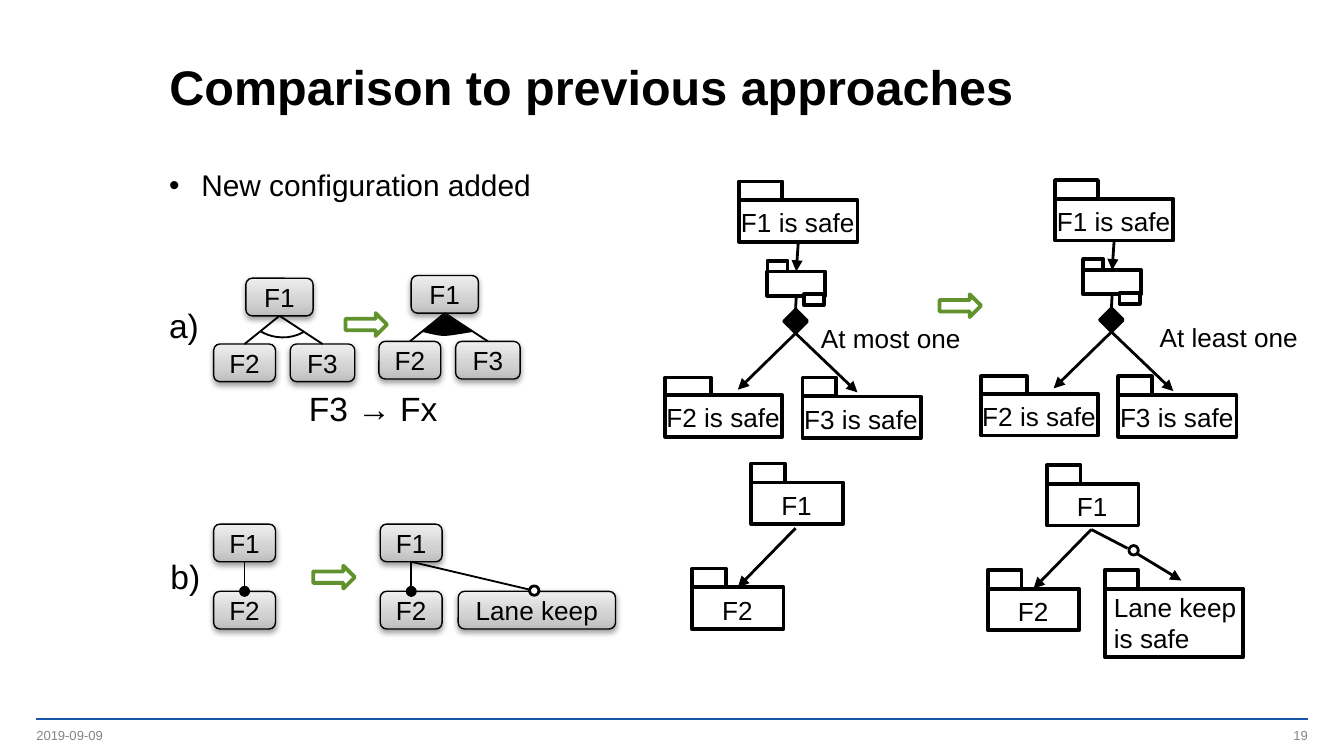
from lxml import etree
from pptx import Presentation
from pptx.dml.color import RGBColor
from pptx.enum.shapes import MSO_CONNECTOR, MSO_SHAPE
from pptx.enum.text import MSO_ANCHOR, MSO_AUTO_SIZE, PP_ALIGN
from pptx.oxml import parse_xml
from pptx.oxml.ns import nsdecls, qn
from pptx.util import Inches, Pt

BLACK = RGBColor(0, 0, 0)
WHITE = RGBColor(255, 255, 255)
GREEN = RGBColor(0x61, 0x92, 0x2E)
BLUE = RGBColor(0x19, 0x54, 0xA6)
GRAY = RGBColor(0x84, 0x84, 0x89)

RECT = MSO_SHAPE.RECTANGLE
ROUND = MSO_SHAPE.ROUNDED_RECTANGLE
PROC = MSO_SHAPE.FLOWCHART_PROCESS
ARROW = MSO_SHAPE.RIGHT_ARROW
OVAL = MSO_SHAPE.OVAL
ARC = MSO_SHAPE.ARC
LEFT, CENTER, RIGHT = PP_ALIGN.LEFT, PP_ALIGN.CENTER, PP_ALIGN.RIGHT
MIDDLE = MSO_ANCHOR.MIDDLE

LABEL = {"word_wrap": False, "auto_size": MSO_AUTO_SIZE.SHAPE_TO_FIT_TEXT}
FOOT = {"word_wrap": True, "vertical_anchor": MIDDLE, "margin_left": 0,
        "margin_right": 0, "margin_top": 0, "margin_bottom": 0}

GRAD = (f'<a:gradFill {nsdecls("a")} rotWithShape="1"><a:gsLst>'
        '<a:gs pos="0"><a:srgbClr val="BDBDBD"/></a:gs>'
        '<a:gs pos="35000"><a:srgbClr val="D1D1D1"/></a:gs>'
        '<a:gs pos="100000"><a:srgbClr val="EEEEEE"/></a:gs>'
        '</a:gsLst><a:lin ang="16200000" scaled="1"/></a:gradFill>')
SHADOW = (f'<a:effectLst {nsdecls("a")}>'
          '<a:outerShdw blurRad="40000" dist="20000" dir="5400000" rotWithShape="0">'
          '<a:srgbClr val="000000"><a:alpha val="38000"/></a:srgbClr>'
          '</a:outerShdw></a:effectLst>')


def apply(item, form):
    for key, value in form.items():
        setattr(item, key, value)


def write(frame, text, size, form, color=BLACK, align=LEFT, bold=False):
    apply(frame, form)
    frame.text = text
    for para in frame.paragraphs:
        para.alignment = align
        for run in para.runs:
            apply(run.font, {"name": "Arial", "size": Pt(size), "bold": bold})
            run.font.color.rgb = color


def label(shapes, box, text, size=14, form=LABEL, color=BLACK, align=LEFT):
    item = shapes.add_textbox(*map(Inches, box))
    write(item.text_frame, text, size, form, color, align)
    return item


def block(shapes, kind, box, width=2, fill=WHITE, edge=BLACK):
    item = shapes.add_shape(kind, *map(Inches, box))
    item.shadow.inherit = False
    if fill is None:
        item.fill.background()
    else:
        item.fill.solid()
        item.fill.fore_color.rgb = fill
    item.line.color.rgb = edge
    item.line.width = Pt(width)
    return item


def feature(shapes, text, x, y, w=0.46):
    item = block(shapes, ROUND, (x, y, w, 0.28), 0.75)
    props = item._element.spPr
    props.replace(props.find(qn("a:solidFill")), parse_xml(GRAD))
    props.replace(props.find(qn("a:effectLst")), parse_xml(SHADOW))
    write(item.text_frame, text, 14, {"vertical_anchor": MIDDLE}, align=CENTER)
    return item


def package(shapes, x, y, w, tab=0.25, h=0.31, rise=0.14):
    """Draw a folder-like box and return its body."""
    body = block(shapes, PROC, (x, y, w, h))
    block(shapes, RECT, (x, y - rise, tab, rise))
    return body


def named(shapes, text, x, y, w, tab=0.25, rise=0.14):
    """Draw a package with a label centred over its body."""
    body = package(shapes, x, y, w, tab, rise=rise)
    wide = 1.05 if "safe" in text else 0.43
    label(shapes, (x + w / 2 - wide / 2, y, wide, 0.34), text)
    return body


def line(shapes, start, end, width=1.5, tail=None, color=BLACK):
    """Join two points; a shape stands for its bottom (start) or top (end)."""
    free = [p if isinstance(p, tuple) else (0, 0) for p in (start, end)]
    item = shapes.add_connector(MSO_CONNECTOR.STRAIGHT,
                                *(Inches(n) for p in free for n in p))
    if not isinstance(start, tuple):
        item.begin_connect(start, 2)
    if not isinstance(end, tuple):
        item.end_connect(end, 0)
    item.line.color.rgb = color
    item.line.width = Pt(width)
    if tail:
        etree.SubElement(item.line._get_or_add_ln(), qn("a:tailEnd"), type=tail)
    etree.SubElement(item._element.spPr, qn("a:effectLst"))


def wedge(shapes):
    """Fill the or-group sector, its lower edge following a cubic curve."""
    curve = ((3.52, 2.47), (3.27, 2.51), (3.32, 2.51), (3.14, 2.47))
    points = [(3.31, 2.34)]
    for step in range(11):
        t = step / 10
        parts = ((1 - t) ** 3, 3 * t * (1 - t) ** 2, 3 * t * t * (1 - t), t ** 3)
        points.append(tuple(sum(k * p[i] for k, p in zip(parts, curve)) for i in (0, 1)))
    points = [(Inches(x), Inches(y)) for x, y in points]
    path = shapes.build_freeform(*points[0], scale=1.0)
    path.add_line_segments(points[1:], close=True)
    item = path.convert_to_shape()
    item.shadow.inherit = False
    item.fill.solid()
    item.fill.fore_color.rgb = BLACK
    item.line.fill.background()


def split(shapes, x, y):
    """Draw feature F1 over F2 and F3."""
    top = feature(shapes, "F1", x + 0.24, y, 0.5)
    for text, dx, w in (("F2", 0, 0.46), ("F3", 0.57, 0.48)):
        line(shapes, top, feature(shapes, text, x + dx, y + 0.49, w), 1)


def pair(shapes, x):
    """Draw feature F1 over a mandatory F2."""
    top = feature(shapes, "F1", x, 3.9)
    line(shapes, top, feature(shapes, "F2", x, 4.4), 1, "oval")
    return top


def tree(shapes, x, y):
    """Draw the safety argument with a choice between F2 and F3."""
    top = named(shapes, "F1 is safe", x + 0.55, y, 0.88, 0.32)
    named(shapes, "F2 is safe", x, y + 1.45, 0.87, 0.34, 0.13)
    named(shapes, "F3 is safe", x + 1.02, y + 1.46, 0.88)
    block(shapes, RECT, (x + 0.91, y + 0.84, 0.12, 0.12), fill=BLACK).rotation = 45
    group = shapes.add_group_shape().shapes
    node = package(group, x + 0.76, y + 0.53, 0.43, 0.15, 0.18, 0.08)
    block(group, RECT, (x + 1.03, y + 0.7, 0.15, 0.08))
    line(shapes, top, node, tail="triangle")
    line(shapes, node, (x + 0.97, y + 0.81))
    for dx, dy in ((1.43, 1.43), (0.54, 1.41)):
        line(shapes, (x + 0.97, y + 0.99), (x + dx, y + dy), tail="triangle")


def chain(shapes, x, y):
    """Draw package F1 pointing to package F2."""
    named(shapes, "F1", x + 0.44, y, 0.68)
    low = named(shapes, "F2", x, y + 0.78, 0.68)
    line(shapes, (x + 0.77, y + 0.34), low, tail="triangle")


def head(slide):
    title = slide.shapes.title
    apply(title, dict(zip(("left", "top", "width", "height"),
                          map(Inches, (1.16, 0.28, 8.26, 0.74)))))
    form = {"vertical_anchor": MIDDLE, "auto_size": MSO_AUTO_SIZE.NONE}
    write(title.text_frame, "Comparison to previous approaches", 26, form, bold=True)
    title.text_frame.paragraphs[0].line_spacing = Pt(30)

    body = label(slide.shapes, (1.16, 1.22, 8.27, 3.95), "New configuration added",
                 16, {"word_wrap": True})
    para = body.text_frame.paragraphs[0]
    props = para._p.get_or_add_pPr()
    props.set("marL", str(Inches(0.24)))
    props.set("indent", str(-Inches(0.24)))
    etree.SubElement(props, qn("a:buFont"), typeface="Arial")
    etree.SubElement(props, qn("a:buChar"), char="•")
    apply(para, {"line_spacing": 0.9, "space_after": Pt(2)})


def main():
    deck = Presentation()
    deck.slide_width, deck.slide_height = Inches(10), Inches(10 * 9 / 16)
    slide = deck.slides.add_slide(deck.slide_layouts[5])
    shapes = slide.shapes

    line(shapes, (0.27, 5.35), (9.73, 5.35), 1, color=BLUE)
    head(slide)
    for text, x, align in (("2019-09-09", 0.27, LEFT), ("19", 7.48, RIGHT)):
        label(shapes, (x, 5.41, 2.25, 0.13), text, 7, FOOT, GRAY, align)
    for text, x, y, w in (("a)", 1.16, 2.22, 0.43), ("b)", 1.17, 4.09, 0.43),
                          ("F3 → Fx", 2.2, 2.84, 1.17)):
        label(shapes, (x, y, w, 0.4), text, 18)

    split(shapes, 1.59, 2.07)
    arc = block(shapes, ARC, (1.78, 1.87, 0.62, 0.65), 1, None)
    arc.rotation = 127.5
    arc.adjustments[0], arc.adjustments[1] = 174.6, 210.57
    wedge(shapes)
    split(shapes, 2.82, 2.05)

    pair(shapes, 1.59)
    top = pair(shapes, 2.83)
    line(shapes, top, feature(shapes, "Lane keep", 3.41, 4.4, 1.17), 1)
    for x, y in ((2.57, 2.33), (2.33, 4.21), (6.99, 2.19)):
        block(shapes, ARROW, (x, y, 0.31, 0.17), edge=GREEN)

    tree(shapes, 4.95, 1.49)
    label(shapes, (6.01, 2.35, 1.25, 0.34), "At most one")
    tree(shapes, 7.3, 1.48)
    label(shapes, (8.53, 2.34, 1.24, 0.34), "At least one")

    chain(shapes, 5.15, 3.59)
    chain(shapes, 7.35, 3.6)
    package(shapes, 8.22, 4.38, 1.03, h=0.51)
    label(shapes, (8.19, 4.35, 1.17, 0.57), "Lane keep\nis safe")
    line(shapes, (8.12, 3.94), (8.39, 4.08))
    line(shapes, (8.46, 4.12), (8.79, 4.32), tail="triangle")
    for x, y in ((3.94, 4.36), (8.4, 4.06)):
        block(shapes, OVAL, (x, y, 0.07, 0.07), 1.5)

    deck.save("out.pptx")


if __name__ == "__main__":
    main()
